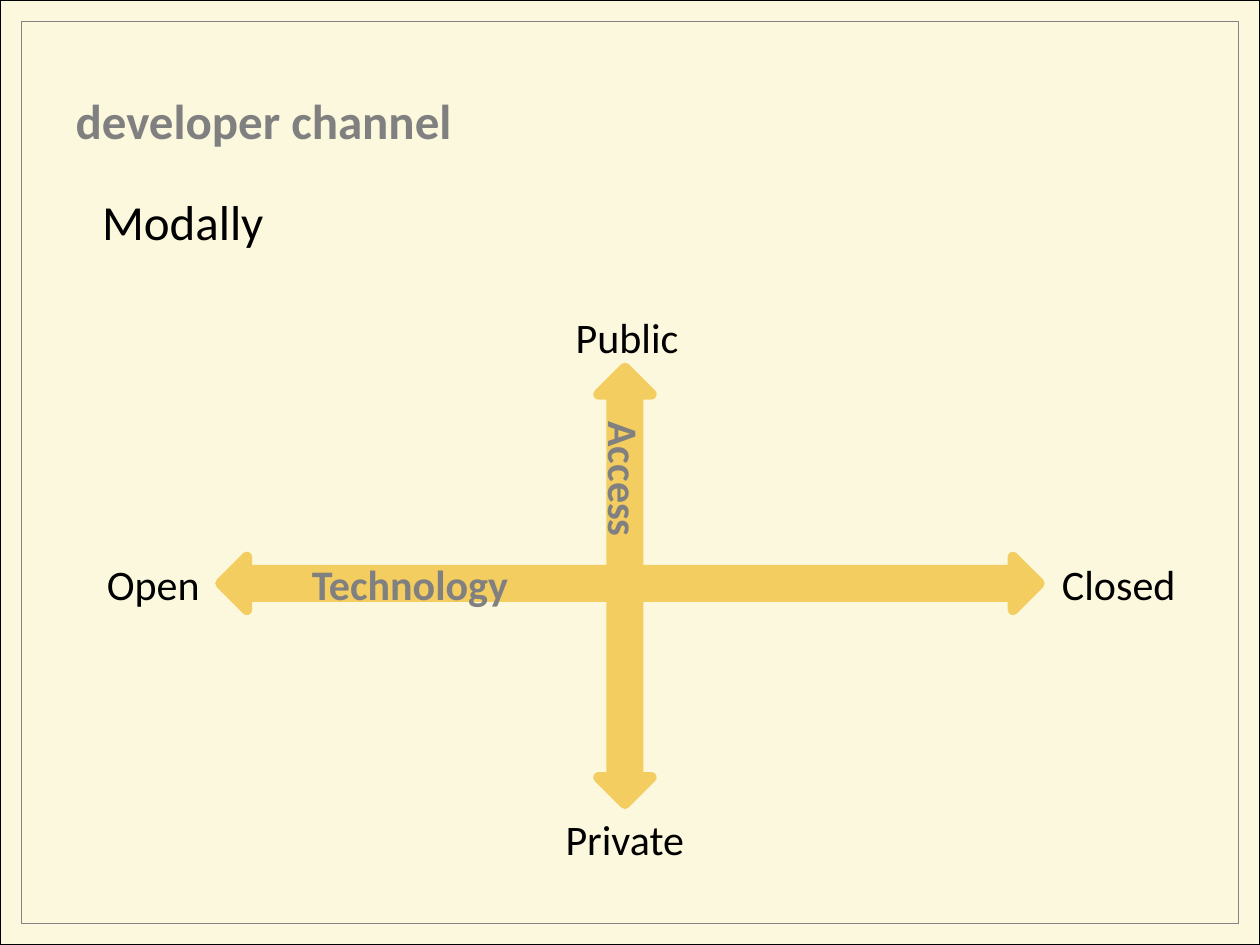
"""Build the developer channel slide: a cross of access and technology axes."""
import pptx
import pptx.util
import pptx.dml.color
import pptx.enum.shapes
import pptx.enum.text
import lxml.etree

W, H = 10, 7.5
COLORS = {"cream": "FCF8DE", "black": "000000", "frame": "848484",
          "gold": "F3CD60", "gray": "808080"}
TITLE = ("developer channel", (0.5, 0.67, 9, 0.57),
         {"size": 28, "bold": True, "color": "gray"})
BODY = ("Modally", (0.71, 1.42, 3.79, 0.67),
        {"size": 28, "bold": False, "color": "black"})
FRAMES = [(0, "cream", "black", 0.75), (0.17, None, "frame", 0.5)]
AXES = [("Technology", (1.75, 4.42, 6.5, 0.42), 0, 0.62),
        ("Access", (3.23, 4.44, 3.46, 0.42), 90, 0.32)]
ENDS = [("Open", 0.75, 4.38, 0.95), ("Closed", 8.33, 4.38, 1.11),
        ("Public", 4.47, 2.42, 1.03), ("Private", 4.39, 6.41, 1.15)]
AXIS_FONT = {"size": 24, "bold": True, "color": "gray"}
END_FONT = {"size": 24, "bold": False, "color": "black"}
MIDDLE = pptx.enum.text.MSO_ANCHOR.MIDDLE
TOP = pptx.enum.text.MSO_ANCHOR.TOP


def rgb(name):
    return pptx.dml.color.RGBColor.from_string(COLORS[name])


def inches(box):
    return [pptx.util.Inches(v) for v in box]


def write(sp, text, font, anchor=MIDDLE, wrap=True, left=0.1):
    tf = sp.text_frame
    frame = {"auto_size": pptx.enum.text.MSO_AUTO_SIZE.NONE,
             "word_wrap": wrap, "vertical_anchor": anchor,
             "margin_left": pptx.util.Inches(left),
             "margin_right": pptx.util.Inches(0.1),
             "margin_top": pptx.util.Inches(0.05),
             "margin_bottom": pptx.util.Inches(0.05)}
    for name, value in frame.items():
        setattr(tf, name, value)
    p = tf.paragraphs[0]
    p.alignment = pptx.enum.text.PP_ALIGN.LEFT
    p.space_before = pptx.util.Pt(0)
    r = p.add_run()
    r.text = text
    values = {"name": "Calibri", "size": pptx.util.Pt(font["size"]),
              "bold": font["bold"]}
    for name, value in values.items():
        setattr(r.font, name, value)
    r.font.color.rgb = rgb(font["color"])


def draw(s, kind, box, fill, line, width):
    sp = s.shapes.add_shape(kind, *inches(box))
    sp.shadow.inherit = False
    if fill:
        sp.fill.solid()
        sp.fill.fore_color.rgb = rgb(fill)
    else:
        sp.fill.background()
    sp.line.color.rgb = rgb(line)
    sp.line.width = pptx.util.Pt(width)
    return sp


def fill_placeholder(sp, text, box, font):
    for name, value in zip(("left", "top", "width", "height"), inches(box)):
        setattr(sp, name, value)
    write(sp, text, font)


def main():
    prs = pptx.Presentation()
    prs.slide_width, prs.slide_height = inches((W, H))
    s = prs.slides.add_slide(prs.slide_layouts[1])
    shape = pptx.enum.shapes.MSO_SHAPE

    for i, (inset, fill, line, width) in enumerate(FRAMES):
        box = (inset, inset, W - 2 * inset, H - 2 * inset)
        sp = draw(s, shape.RECTANGLE, box, fill, line, width)
        s.shapes.element.insert(2 + i, sp.element)

    fill_placeholder(s.shapes.title, *TITLE)
    body = s.placeholders[1]
    fill_placeholder(body, *BODY)
    pPr = body.text_frame.paragraphs[0].element.get_or_add_pPr() \
        if hasattr(body.text_frame.paragraphs[0], "element") \
        else body.text_frame.paragraphs[0]._p.get_or_add_pPr()
    pPr.set("marL", "0")
    pPr.set("indent", "0")
    ns = pptx.oxml.ns.qn("a:buNone")
    lxml.etree.SubElement(pPr, ns)

    for text, box, turn, left in AXES:
        sp = draw(s, shape.LEFT_RIGHT_ARROW, box, "gold", "gold", 6)
        sp.rotation = turn
        write(sp, text, AXIS_FONT, left=left)

    for text, x, y, width in ENDS:
        sp = s.shapes.add_textbox(*inches((x, y, width, 0.5)))
        write(sp, text, END_FONT, TOP, wrap=False)

    prs.save("out.pptx")


if __name__ == "__main__":
    main()
